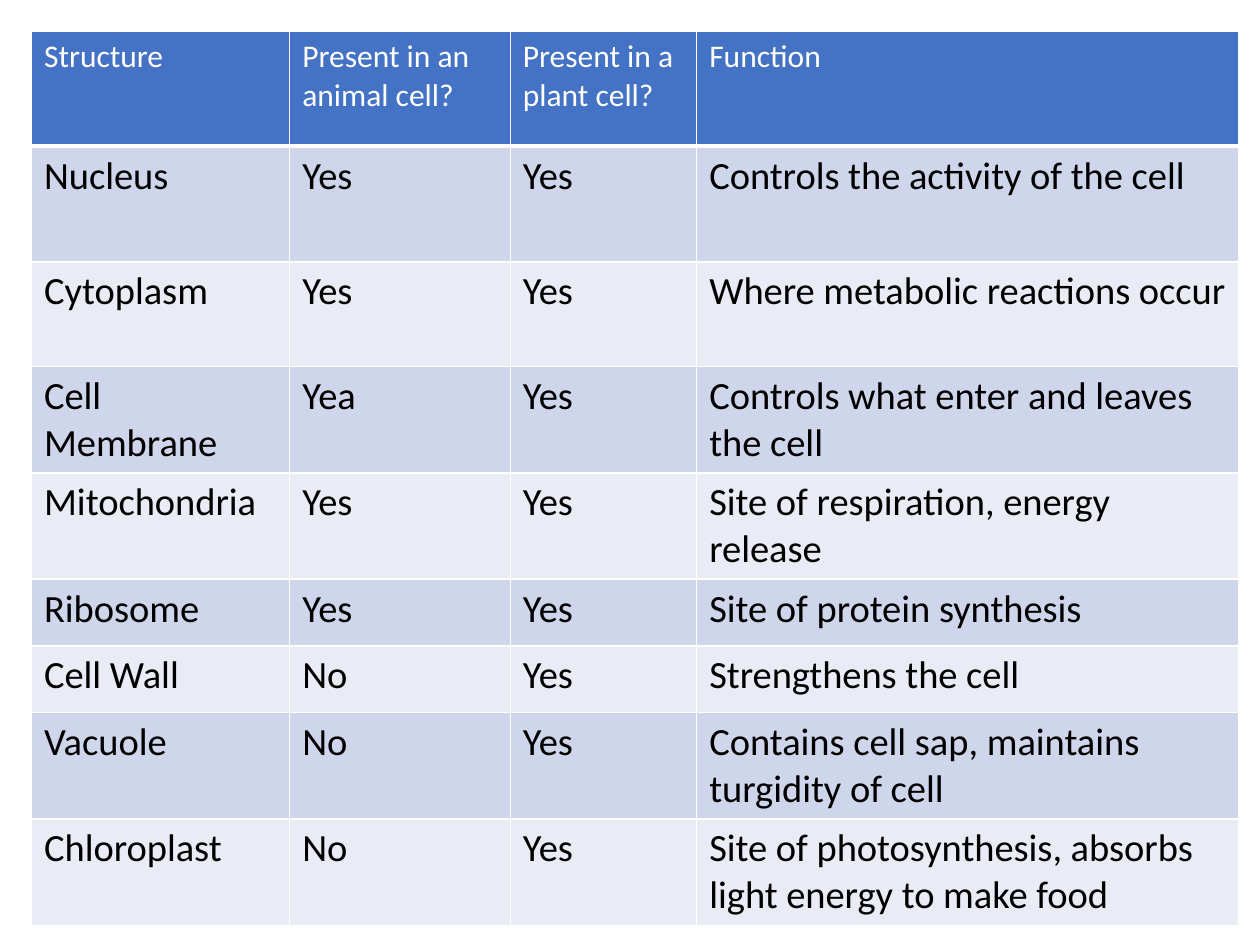
from dataclasses import dataclass

from lxml.etree import SubElement
from pptx import Presentation
from pptx.dml.color import RGBColor
from pptx.oxml.ns import qn
from pptx.util import Inches, Pt


@dataclass(frozen=True)
class Theme:
    font: str = "Calibri"
    header_size: int = 18
    body_size: int = 22
    header_fill: str = "4472C4"
    band_fills: tuple = ("CFD5EA", "E9EBF5")
    header_text: str = "FFFFFF"
    body_text: str = "000000"
    border: str = "FFFFFF"
    border_width: int = 1
    header_rule_width: int = 3


THEME = Theme()

COLUMN_WIDTHS = (2.05, 1.75, 1.48, 4.3)
ROW_HEIGHTS = (0.91, 0.92, 0.83, 0.83, 0.83, 0.53, 0.53, 0.83, 0.83)
ROWS = (
    ("Structure", "Present in an animal cell?", "Present in a plant cell?", "Function"),
    ("Nucleus", "Yes", "Yes", "Controls the activity of the cell"),
    ("Cytoplasm", "Yes", "Yes", "Where metabolic reactions occur"),
    ("Cell Membrane", "Yea", "Yes", "Controls what enter and leaves the cell"),
    ("Mitochondria", "Yes", "Yes", "Site of respiration, energy release"),
    ("Ribosome", "Yes", "Yes", "Site of protein synthesis"),
    ("Cell Wall", "No", "Yes", "Strengthens the cell"),
    ("Vacuole", "No", "Yes", "Contains cell sap, maintains turgidity of cell"),
    ("Chloroplast", "No", "Yes",
     "Site of photosynthesis, absorbs light energy to make food"),
)


def set_borders(cell, bottom_width):
    """Draw all four cell borders; call before filling, as the schema wants lines first."""
    properties = cell._tc.get_or_add_tcPr()
    for side in "LRTB":
        width = bottom_width if side == "B" else THEME.border_width
        line = SubElement(properties, qn(f"a:ln{side}"), w=str(Pt(width)))
        fill = SubElement(line, qn("a:solidFill"))
        SubElement(fill, qn("a:srgbClr"), val=THEME.border)


def style_cell(cell, row_index):
    is_header = row_index == 0
    set_borders(cell, THEME.header_rule_width if is_header else THEME.border_width)
    fill_color = THEME.header_fill if is_header else THEME.band_fills[(row_index - 1) % 2]
    cell.fill.solid()
    cell.fill.fore_color.rgb = RGBColor.from_string(fill_color)

    font = cell.text_frame.paragraphs[0].runs[0].font
    font.name = THEME.font
    font.bold = False
    font.size = Pt(THEME.header_size if is_header else THEME.body_size)
    font.color.rgb = RGBColor.from_string(
        THEME.header_text if is_header else THEME.body_text)


def add_cell_structure_table(slide):
    table = slide.shapes.add_table(
        len(ROWS), len(COLUMN_WIDTHS), Inches(0.25), Inches(0.25),
        Inches(sum(COLUMN_WIDTHS)), Inches(sum(ROW_HEIGHTS))).table
    for column, width in zip(table.columns, COLUMN_WIDTHS):
        column.width = Inches(width)
    for row_index, (row, height, texts) in enumerate(zip(table.rows, ROW_HEIGHTS, ROWS)):
        row.height = Inches(height)
        for cell, text in zip(row.cells, texts):
            cell.text_frame.text = text
            style_cell(cell, row_index)


def main():
    presentation = Presentation()
    presentation.slide_width = Inches(10)
    presentation.slide_height = Inches(7.5)
    slide = presentation.slides.add_slide(presentation.slide_layouts[6])
    add_cell_structure_table(slide)
    presentation.save("out.pptx")


if __name__ == "__main__":
    main()
